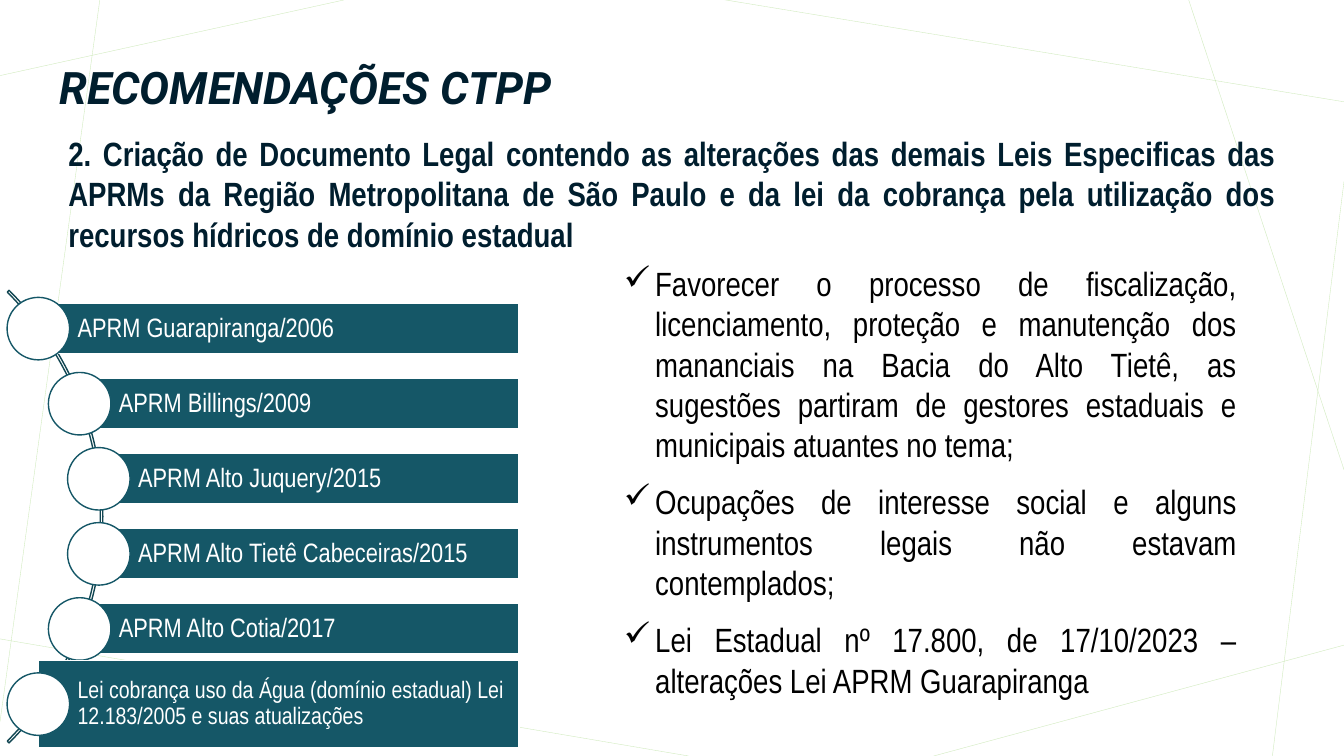
import pptx
import pptx.util
import pptx.dml.color
import pptx.enum.shapes
import pptx.enum.text
import pptx.oxml.ns
from lxml import etree

Inches = pptx.util.Inches
Pt = pptx.util.Pt
RGBColor = pptx.dml.color.RGBColor
Shape = pptx.enum.shapes.MSO_SHAPE
Align = pptx.enum.text.PP_ALIGN
Anchor = pptx.enum.text.MSO_ANCHOR
qn = pptx.oxml.ns.qn

NAVY = RGBColor(0x00, 0x1E, 0x2E)
TEAL = RGBColor(0x15, 0x57, 0x67)
DARK = RGBColor(0x11, 0x46, 0x52)
LIME = RGBColor(0xBA, 0xE1, 0x9E)
WHITE = RGBColor(0xFF, 0xFF, 0xFF)
BLACK = RGBColor(0x00, 0x00, 0x00)
NARROW = "Arial Narrow"

RAYS = [
    (3.41, 0, 0, 0.75),
    (0.99, 0, 0, 7.16),
    (6.83, 7.5, -0.05, 6.33),
    (13.33, 6.4, 9.26, 7.5),
    (13.33, 1.8, 12.62, 7.5),
    (13.33, 4.66, 11.79, 0),
    (13.33, 1.01, 7.14, -0.01),
]
LAWS = [
    (0.38, "APRM Guarapiranga/2006"),
    (0.79, "APRM Billings/2009"),
    (0.98, "APRM Alto Juquery/2015"),
    (0.98, "APRM Alto Tietê Cabeceiras/2015"),
    (0.79, "APRM Alto Cotia/2017"),
    (0.38, "Lei cobrança uso da Água (domínio estadual) Lei 12.183/2005 e suas atualizações"),
]
THEME = (
    "2. Criação de Documento Legal contendo as alterações das demais Leis Especificas das "
    "APRMs da Região Metropolitana de São Paulo e da lei da cobrança pela utilização dos "
    "recursos hídricos de domínio estadual"
)
POINTS = [
    "Favorecer o processo de fiscalização, licenciamento, proteção e manutenção dos "
    "mananciais na Bacia do Alto Tietê, as sugestões partiram de gestores estaduais e "
    "municipais atuantes no tema;",
    "Ocupações de interesse social e alguns instrumentos legais não estavam contemplados;",
    "Lei Estadual nº 17.800, de 17/10/2023 – alterações Lei APRM Guarapiranga",
]


def style(para, size, color, face=NARROW, bold=False, italic=False):
    font = para.font
    font.name, font.size = face, Pt(size)
    font.bold, font.italic = bold, italic
    font.color.rgb = color


def add_ray(slide, ends):
    ray = slide.shapes.add_connector(
        pptx.enum.shapes.MSO_CONNECTOR.STRAIGHT, *[Inches(v) for v in ends])
    ray.line.width = Pt(0.25)
    ray.line.color.rgb = LIME
    tint = ray.line._ln.find(".//" + qn("a:srgbClr"))
    etree.SubElement(tint, qn("a:alpha")).set("val", "70000")
    etree.SubElement(ray._element.spPr, qn("a:effectLst"))


def add_text(slide, area, texts):
    box = slide.shapes.add_textbox(*[Inches(v) for v in area])
    frame = box.text_frame
    frame.word_wrap = True
    frame.text = "\n".join(texts)
    return frame


def add_form(slide, kind, area, fill, edge):
    form = slide.shapes.add_shape(kind, *[Inches(v) for v in area])
    form.shadow.inherit = False
    if fill is None:
        form.fill.background()
    else:
        form.fill.solid()
        form.fill.fore_color.rgb = fill
    form.line.color.rgb = edge
    form.line.width = Pt(1)
    return form


def add_title(slide):
    frame = add_text(slide, (0.49, 0.14, 10.83, 1.51), ["RECOMENDAÇÕES CTPP"])
    frame.vertical_anchor = Anchor.MIDDLE
    para = frame.paragraphs[0]
    para.line_spacing = 0.9
    style(para, 32, NAVY, "Roboto", True, True)


def add_theme(slide):
    para = add_text(slide, (0.58, 1.27, 12.17, 1.73), [THEME]).paragraphs[0]
    para.alignment = Align.JUSTIFY
    style(para, 24, NAVY, bold=True)


def add_points(slide):
    frame = add_text(slide, (6.09, 2.56, 6.27, 4.48), POINTS)
    for rank, para in enumerate(frame.paragraphs):
        para.alignment = Align.JUSTIFY
        if rank:
            para.space_before = Pt(12)
        props = para._p.get_or_add_pPr()
        props.set("marL", str(Inches(0.31)))
        props.set("indent", str(-Inches(0.31)))
        etree.SubElement(props, qn("a:buChar")).set("char", "✓")
        style(para, 24, BLACK)


def add_arc(slide):
    arc = add_form(slide, Shape.BLOCK_ARC, (-5.33, 1.95, 6.35, 6.35), None, DARK)
    for rank, value in enumerate((189, 27, 0.004)):
        arc.adjustments[rank] = value


def add_law(slide, left, mid, high, text, size):
    bar = add_form(slide, Shape.RECTANGLE, (left, mid - high / 2, 5.15 - left, high), TEAL, WHITE)
    frame = bar.text_frame
    frame.word_wrap = True
    frame.vertical_anchor = Anchor.MIDDLE
    frame.margin_left = Inches(0.39)
    frame.margin_top = frame.margin_right = frame.margin_bottom = Inches(0.05)
    frame.text = text
    para = frame.paragraphs[0]
    para.alignment = Align.LEFT
    para.line_spacing = 0.9
    style(para, size, WHITE)
    add_form(slide, Shape.OVAL, (left - 0.31, mid - 0.31, 0.62, 0.62), WHITE, TEAL)


def main():
    deck = pptx.Presentation()
    deck.slide_width, deck.slide_height = Inches(13.33), Inches(7.5)
    slide = deck.slides.add_slide(deck.slide_layouts[6])
    for ends in RAYS:
        add_ray(slide, ends)
    add_title(slide)
    add_theme(slide)
    add_points(slide)
    add_arc(slide)
    for rank, (left, text) in enumerate(LAWS):
        last = rank == len(LAWS) - 1
        high, size = (0.87, 17) if last else (0.5, 19)
        add_law(slide, left, 3.26 + 0.745 * rank, high, text, size)
    deck.save("out.pptx")


if __name__ == "__main__":
    main()
